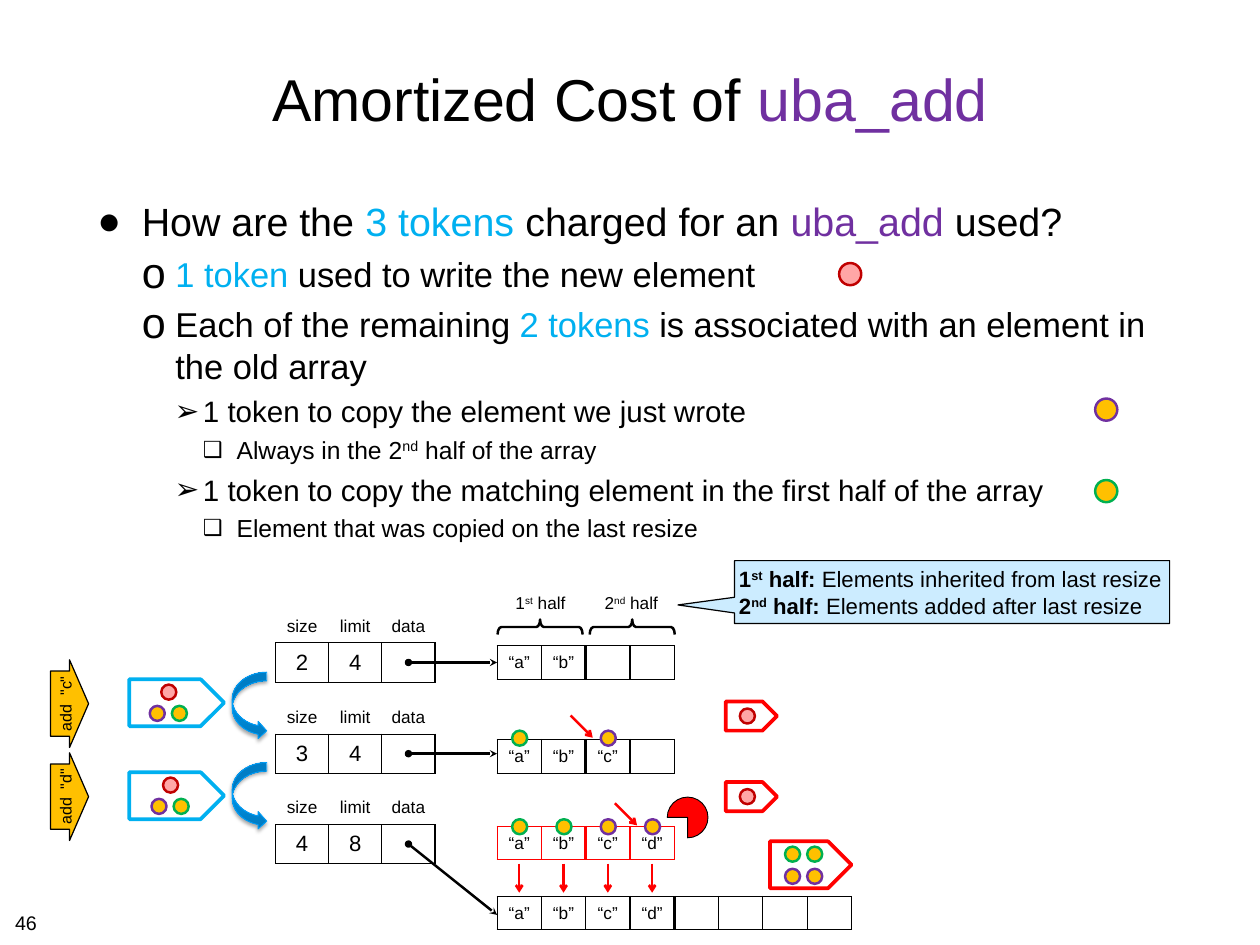
from lxml.etree import SubElement as Sub
from pptx import Presentation
from pptx.dml.color import RGBColor as RGB
from pptx.enum.shapes import MSO_CONNECTOR as LINK, MSO_SHAPE as KIND
from pptx.enum.text import MSO_ANCHOR as ANCHOR, MSO_AUTO_SIZE as AUTO, PP_ALIGN as ALIGN
from pptx.oxml.ns import qn
from pptx.util import Inches, Pt

HUES = {"black": "000000", "red": "FF0000", "dark": "C00000", "gold": "FFC000",
        "violet": "7030A0", "green": "00B050", "sky": "00B0F0", "pale": "CCECFF",
        "deep": "0079BE", "blue": "009DF7", "edge": "009EF9"}
SUP = {"sup": True}
BOLD = {"bold": True}
BOLDSUP = {"bold": True, "sup": True}
SKY = {"hue": "sky"}
VIOLET = {"hue": "violet"}
TIGHT = dict.fromkeys(("margin_left", "margin_top", "margin_right", "margin_bottom"), 0)
SNUG = dict.fromkeys(TIGHT, Inches(0.06))
LEVELS = [(0.5, 0.5, 8, "●", 100, 32), (0.88, 0.38, 7, "o", 125, 28),
          (1.19, 0.32, 6, "➢", 100, 24), (1.57, 0.38, 4.8, "❑", 90, 20)]
TOKENS = {"fresh": ("red", "dark"), "own": ("gold", "violet"), "match": ("gold", "green")}


def shade(name):
    return RGB.from_string(HUES[name])


def apply(item, form):
    for key, value in form.items():
        setattr(item, key, value)


class Board:
    """Draws styled elements on the current slide."""

    def __init__(self, wide, high, font):
        self.deck = Presentation()
        apply(self.deck, {"slide_width": Inches(wide), "slide_height": Inches(high)})
        self.slide = self.deck.slides.add_slide(self.deck.slide_layouts[1])
        self.shapes = self.slide.shapes
        self.font = font

    def runs(self, para, parts, size, align=ALIGN.CENTER):
        para.alignment = align
        for part in parts:
            text, form = (part, {}) if isinstance(part, str) else part
            run = para.add_run()
            run.text = text
            apply(run.font, {"name": self.font, "size": Pt(size), "bold": form.get("bold", False)})
            run.font.color.rgb = shade(form.get("hue", "black"))
            if form.get("sup"):
                run.font._element.set("baseline", "30000")

    def words(self, frame, paras, size, align=ALIGN.CENTER, **form):
        apply(frame, {"word_wrap": False, **form})
        for spot, parts in enumerate(paras):
            para = frame.add_paragraph() if spot else frame.paragraphs[0]
            self.runs(para, parts, size, align)

    def holder(self, spot, box):
        item = self.slide.placeholders[spot]
        apply(item, dict(zip(("left", "top", "width", "height"), map(Inches, box))))
        apply(item.text_frame, {**SNUG, "word_wrap": True, "auto_size": AUTO.NONE})
        return item.text_frame

    def title(self, box, parts, size):
        self.words(self.holder(0, box), [parts], size, word_wrap=True,
                   vertical_anchor=ANCHOR.MIDDLE)

    def bullets(self, box, items):
        frame = self.holder(1, box)
        for spot, (level, parts) in enumerate(items):
            left, hang, gap, mark, scale, size = LEVELS[level]
            para = frame.add_paragraph() if spot else frame.paragraphs[0]
            apply(para, {"level": level, "space_before": Pt(gap)})
            self.runs(para, parts, size, ALIGN.LEFT)
            props = para._p.get_or_add_pPr()
            props.set("marL", str(Inches(left)))
            props.set("indent", str(-Inches(hang)))
            Sub(Sub(props, qn("a:buClr")), qn("a:srgbClr"), val=HUES["black"])
            Sub(props, qn("a:buSzPct"), val=str(scale * 1000))
            Sub(props, qn("a:buFont"), typeface=self.font)
            Sub(props, qn("a:buChar"), char=mark)

    def label(self, box, parts, size, align=ALIGN.CENTER, **form):
        frame = self.shapes.add_textbox(*map(Inches, box)).text_frame
        self.words(frame, [parts], size, align, **form)

    def shape(self, kind, box, line, width, fill=None, turn=0, adjust=()):
        item = self.shapes.add_shape(kind, *map(Inches, box))
        item.shadow.inherit = False
        item.rotation = turn
        for spot, value in enumerate(adjust):
            item.adjustments[spot] = value
        if fill:
            item.fill.solid()
            item.fill.fore_color.rgb = shade(fill)
        else:
            item.fill.background()
        item.line.color.rgb = shade(line)
        item.line.width = Pt(width)
        return item

    def token(self, kind, left, top, size=0.17):
        fill, line = TOKENS[kind]
        item = self.shape(KIND.OVAL, (left, top, size, size), line, 2, fill)
        if kind == "fresh":
            tint = item._element.spPr.find(qn("a:solidFill"))[0]
            Sub(tint, qn("a:alpha"), val="35000")

    def swoop(self, box):
        item = self.shape(KIND.CURVED_RIGHT_ARROW, box, "edge", 0.75)
        item.fill.gradient()
        item.fill.gradient_angle = 90
        for stop, hue, place in zip(item.fill.gradient_stops, ("deep", "blue"), (0, 0.8)):
            stop.color.rgb = shade(hue)
            stop.position = place
        glow = Sub(item._element.spPr.find(qn("a:effectLst")), qn("a:outerShdw"),
                   blurRad=str(Pt(3.1)), dist=str(Pt(1.8)), dir="5400000", rotWithShape="0")
        tint = Sub(glow, qn("a:srgbClr"), val=HUES["black"])
        Sub(tint, qn("a:alpha"), val="35000")

    def arrow(self, start, end, hue, tail, head=None):
        item = self.shapes.add_connector(LINK.STRAIGHT, *map(Inches, (*start, *end)))
        item.line.color.rgb = shade(hue)
        item.line.width = Pt(2)
        line = item.line._get_or_add_ln()
        for tag, kind in (("a:headEnd", head), ("a:tailEnd", tail)):
            if kind:
                Sub(line, qn(tag), type=kind)
        Sub(item._element.spPr, qn("a:effectLst"))

    def cell(self, cell, text, size, hue, edges, **form):
        props = cell._tc.get_or_add_tcPr()
        for side in "LRTB":
            if side in edges:
                line = Sub(props, qn("a:ln" + side), w=str(Pt(edges[side])))
                Sub(Sub(line, qn("a:solidFill")), qn("a:srgbClr"), val=HUES[hue])
        cell.fill.background()
        apply(cell, {**TIGHT, "vertical_anchor": ANCHOR.MIDDLE, **form})
        if text:
            self.runs(cell.text_frame.paragraphs[0], [text], size)

    def table(self, left, top, wide, highs, count):
        box = map(Inches, (left, top, wide * count, sum(highs)))
        table = self.shapes.add_table(len(highs), count, *box).table
        apply(table, {"first_row": False, "horz_banding": False})
        for row, high in zip(table.rows, highs):
            row.height = Inches(high)
        return table

    def array(self, top, marks, count, hue="black"):
        table = self.table(5.61, top, 0.5, [0.38], count)
        half = count // 2
        for col in range(count):
            edges = {"L": 3 if col == half else 1, "R": 3 if col == half - 1 else 1, "T": 1, "B": 1}
            text = f"“{marks[col]}”" if col < len(marks) else ""
            self.cell(table.cell(0, col), text, 14, hue, edges)

    def record(self, top, size, limit, target):
        table = self.table(3.11, top, 0.6, [0.3, 0.43], 3)
        for col, (name, value) in enumerate((("size", size), ("limit", limit), ("data", ""))):
            self.cell(table.cell(0, col), name, 14, "black", {"B": 1}, vertical_anchor=ANCHOR.TOP)
            self.cell(table.cell(1, col), value, 18, "black", dict.fromkeys("LRTB", 1),
                      margin_top=Inches(0.07), margin_bottom=Inches(0.07))
        self.arrow((4.61, top + 0.52), (5.61, target), "black", "stealth", "oval")

    def charge(self, left, top, name):
        for kind, dx, dy in (("fresh", 0.13, 0), ("own", 0, 0.24), ("match", 0.25, 0.24)):
            self.token(kind, left + dx, top + dy)
        self.shape(KIND.PENTAGON, (1.46, top - 0.06, 1.07, 0.53), "sky", 3)
        flag = self.shape(KIND.DOWN_ARROW, (0.29, top, 0.99, 0.43), "black", 1, "gold", 270, (0.744, 0.5))
        self.words(flag.text_frame, [[f'add  "{name}"']], 13, vertical_anchor=ANCHOR.MIDDLE,
                   **{**SNUG, "margin_bottom": 0})


def main():
    board = Board(14.22, 10.67, "Arial")
    board.title((1.04, 0.28, 12.14, 1.64), ["Amortized Cost of ", ("uba_add", VIOLET)], 48)
    board.bullets((1.04, 2.17, 12.24, 7.54), [
        (0, ["How are the ", ("3 tokens ", SKY), "charged for an ", ("uba_add", VIOLET), " used?"]),
        (1, [("1 token ", SKY), "used to write the new element"]),
        (1, ["Each of the remaining ", ("2 tokens", SKY),
             " is associated with an element in the old array"]),
        (2, ["1 token to copy the element we just wrote"]),
        (3, ["Always in the 2", ("nd", SUP), " half of the array"]),
        (2, ["1 token to copy the matching element in the first half of the array"]),
        (3, ["Element that was copied on the last resize"])])
    for kind, left, top in (("fresh", 9.47, 2.97), ("own", 12.36, 4.5), ("match", 12.36, 5.42)):
        board.token(kind, left, top, 0.25)

    board.array(10.12, "abcd", 8)
    board.array(9.33, "abcd", 4, "red")
    board.array(8.35, "abc", 4)
    board.array(7.29, "ab", 4)
    for top in (7.59, 8.61):
        board.swoop((2.62, top, 0.39, 0.76))
    board.shape(KIND.PIE, (7.53, 9, 0.46, 0.46), "black", 0.75, "red", 180)
    for top, size, limit, target in ((6.96, "2", "4", 7.48), (7.99, "3", "4", 8.51),
                                     (9.01, "4", "8", 10.33)):
        board.record(top, size, limit, target)

    for col in range(4):
        mid = 5.86 + col * 0.5
        board.arrow((mid, 9.75), (mid, 10.08), "red", "arrow")
        board.token("match" if col < 2 else "own", mid - 0.08, 9.25)
    board.token("match", 5.78, 8.25)
    board.token("own", 6.78, 8.25)
    for left, top in ((6.94, 9.07), (6.44, 8.08)):
        board.arrow((left, top), (left + 0.25, top + 0.25), "red", "arrow")

    board.charge(1.69, 7.73, "c")
    board.charge(1.71, 8.78, "d")
    for top in (7.92, 8.83):
        board.shape(KIND.PENTAGON, (8.19, top, 0.58, 0.33), "red", 3)
        board.token("fresh", 8.35, top + 0.08)
    board.shape(KIND.PENTAGON, (8.69, 9.5, 0.92, 0.53), "red", 3)
    for kind, top in (("match", 9.56), ("own", 9.81)):
        for left in (8.86, 9.11):
            board.token(kind, left, top)

    for left, wide, digit, end, brace in ((5.71, 0.78, "1", "st", 6.01), (6.71, 0.83, "2", "nd", 7.05)):
        board.label((left, 6.64, wide, 0.34), [digit, (end, SUP), " half"], 14)
        board.shape(KIND.LEFT_BRACE, (brace, 6.6, 0.17, 0.96), "black", 2, None, 90, (0.248, 0.5))
    note = board.shape(KIND.RECTANGULAR_CALLOUT, (8.29, 6.33, 4.91, 0.71), "black", 1, "pale",
                       adjust=(-0.63, 0.205))
    board.words(note.text_frame, [
        [("1", BOLD), ("st", BOLDSUP), (" half: ", BOLD), "Elements inherited from last resize"],
        [("2", BOLD), ("nd", BOLDSUP), (" half: ", BOLD), "Elements added after last resize"]],
        18, ALIGN.LEFT, vertical_anchor=ANCHOR.MIDDLE, **dict.fromkeys(TIGHT, Inches(0.05)))
    board.label((0.11, 10.23, 0.37, 0.35), ["46"], 16, ALIGN.LEFT, **SNUG)
    board.deck.save("out.pptx")


if __name__ == "__main__":
    main()
